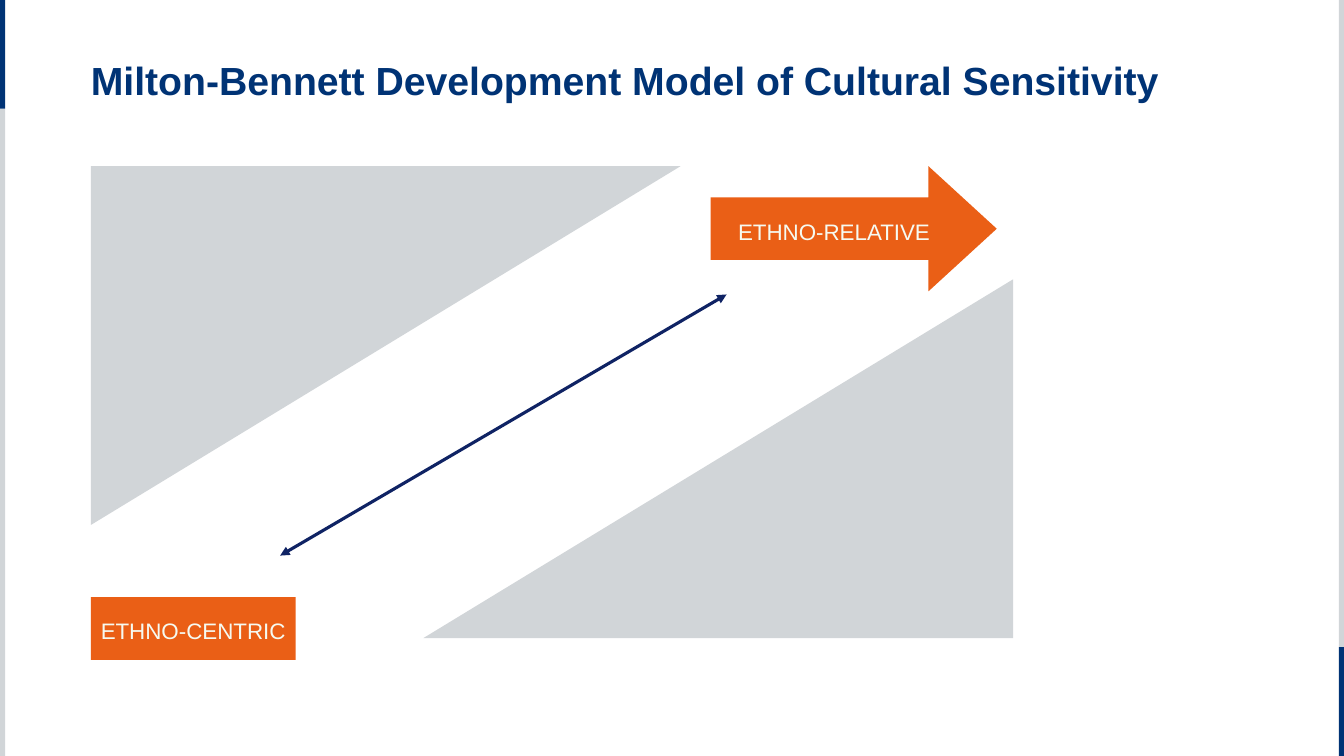
from lxml.etree import SubElement
from pptx import Presentation
from pptx.dml.color import RGBColor
from pptx.enum.shapes import MSO_CONNECTOR, MSO_SHAPE
from pptx.enum.text import MSO_ANCHOR, PP_ALIGN
from pptx.oxml.ns import qn
from pptx.util import Cm, Pt

NAVY = RGBColor(0x00, 0x33, 0x75)
GREY = RGBColor(0xD1, 0xD5, 0xD8)
ORANGE = RGBColor(0xEA, 0x5F, 0x16)
INDIGO = RGBColor(0x0F, 0x23, 0x64)
CREAM = RGBColor(0xF6, 0xFA, 0xF1)

SLIDE_WIDTH, SLIDE_HEIGHT = 33.87, 19.05
TITLE_FONT = {"name": "Arial", "size": Pt(28), "bold": True}
LABEL_FONT = {"name": "Arial", "size": Pt(16), "bold": False}
LABEL_FRAME = {"margin_left": 0, "margin_top": Cm(0.12), "margin_right": 0,
               "margin_bottom": 0, "word_wrap": True,
               "vertical_anchor": MSO_ANCHOR.MIDDLE}
TITLE_FRAME = LABEL_FRAME | {"margin_top": 0, "vertical_anchor": MSO_ANCHOR.TOP}


def apply_format(target, values):
    """Set every attribute in values on target."""
    for attribute, value in values.items():
        setattr(target, attribute, value)


def paint(shape, color):
    """Give a shape a flat fill with no outline or shadow."""
    shape.shadow.inherit = False
    shape.fill.solid()
    shape.fill.fore_color.rgb = color
    shape.line.fill.background()


def add_block(slide, kind, box, color):
    """Add a flat preset shape in a box given in centimetres."""
    block = slide.shapes.add_shape(kind, *map(Cm, box))
    paint(block, color)
    return block


def add_side_strip(slide, left, navy_top, grey_top, width=0.13, navy_height=2.74):
    """Add one edge strip made of a grey and a navy part."""
    grey_height = SLIDE_HEIGHT - navy_height
    for top, height, color in ((grey_top, grey_height, GREY),
                               (navy_top, navy_height, NAVY)):
        add_block(slide, MSO_SHAPE.RECTANGLE, (left, top, width, height), color)


def add_title(slide, box, wording):
    """Place and format the title placeholder."""
    title = slide.shapes.title
    apply_format(title, dict(zip(("left", "top", "width", "height"), map(Cm, box))))
    title.text = wording
    apply_format(title.text_frame, TITLE_FRAME)
    heading = title.text_frame.paragraphs[0]
    apply_format(heading, {"alignment": PP_ALIGN.LEFT, "line_spacing": 0.9})
    apply_format(heading.font, TITLE_FONT)
    heading.font.color.rgb = NAVY


def add_corner(slide, points):
    """Add a grey triangle through three points."""
    start, *others = [(Cm(x), Cm(y)) for x, y in points]
    builder = slide.shapes.build_freeform(*start)
    builder.add_line_segments(others, close=True)
    paint(builder.convert_to_shape(), GREY)


def add_stage(slide, kind, box, wording, right_inset=0):
    """Add an orange stage marker with its label."""
    stage = add_block(slide, kind, box, ORANGE)
    stage.text_frame.text = wording
    apply_format(stage.text_frame, LABEL_FRAME | {"margin_right": Cm(right_inset)})
    label = stage.text_frame.paragraphs[0]
    label.alignment = PP_ALIGN.CENTER
    apply_format(label.font, LABEL_FONT)
    label.font.color.rgb = CREAM
    return stage


def add_continuum(slide, start, end):
    """Add the double-headed line between the two stages."""
    continuum = slide.shapes.add_connector(
        MSO_CONNECTOR.STRAIGHT, *map(Cm, start + end))
    continuum.line.color.rgb = INDIGO
    continuum.line.width = Pt(2.25)
    outline = continuum.line._get_or_add_ln()
    for end_tag in ("a:headEnd", "a:tailEnd"):
        SubElement(outline, qn(end_tag), type="triangle")
    SubElement(continuum._element.spPr, qn("a:effectLst"))


def add_model(slide, left, top, width, height):
    """Draw the sensitivity model inside the given box."""
    right = left + width
    corner_width, corner_height = 14.86, 9.04
    corner_bottom = top + 11.89
    add_corner(slide, [(right, corner_bottom),
                       (right, corner_bottom - corner_height),
                       (right - corner_width, corner_bottom)])
    add_corner(slide, [(left, top), (left, top + corner_height),
                       (left + corner_width, top)])
    add_continuum(slide, (left + 4.77, top + 9.81), (left + 16.02, top + 3.23))
    relative = add_stage(slide, MSO_SHAPE.RIGHT_ARROW,
                         (left + 15.62, top, 7.21, 3.15), "ETHNO-RELATIVE", 0.13)
    relative.adjustments[1] = 0.546
    centric_height = 1.58
    add_stage(slide, MSO_SHAPE.RECTANGLE,
              (left, top + height - centric_height, 5.16, centric_height),
              "ETHNO-CENTRIC")


def main():
    """Build and save the slide."""
    deck = Presentation()
    deck.slide_width, deck.slide_height = Cm(SLIDE_WIDTH), Cm(SLIDE_HEIGHT)
    slide = deck.slides.add_slide(deck.slide_layouts[5])
    add_side_strip(slide, SLIDE_WIDTH - 0.13, navy_top=16.31, grey_top=0)
    add_side_strip(slide, 0, navy_top=0, grey_top=2.74)
    add_title(slide, (2.29, 1.55, 30.33, 2.41),
              "Milton-Bennett Development Model of Cultural Sensitivity")
    add_model(slide, 2.29, 4.19, 23.24, 12.44)
    deck.save("out.pptx")


if __name__ == "__main__":
    main()
